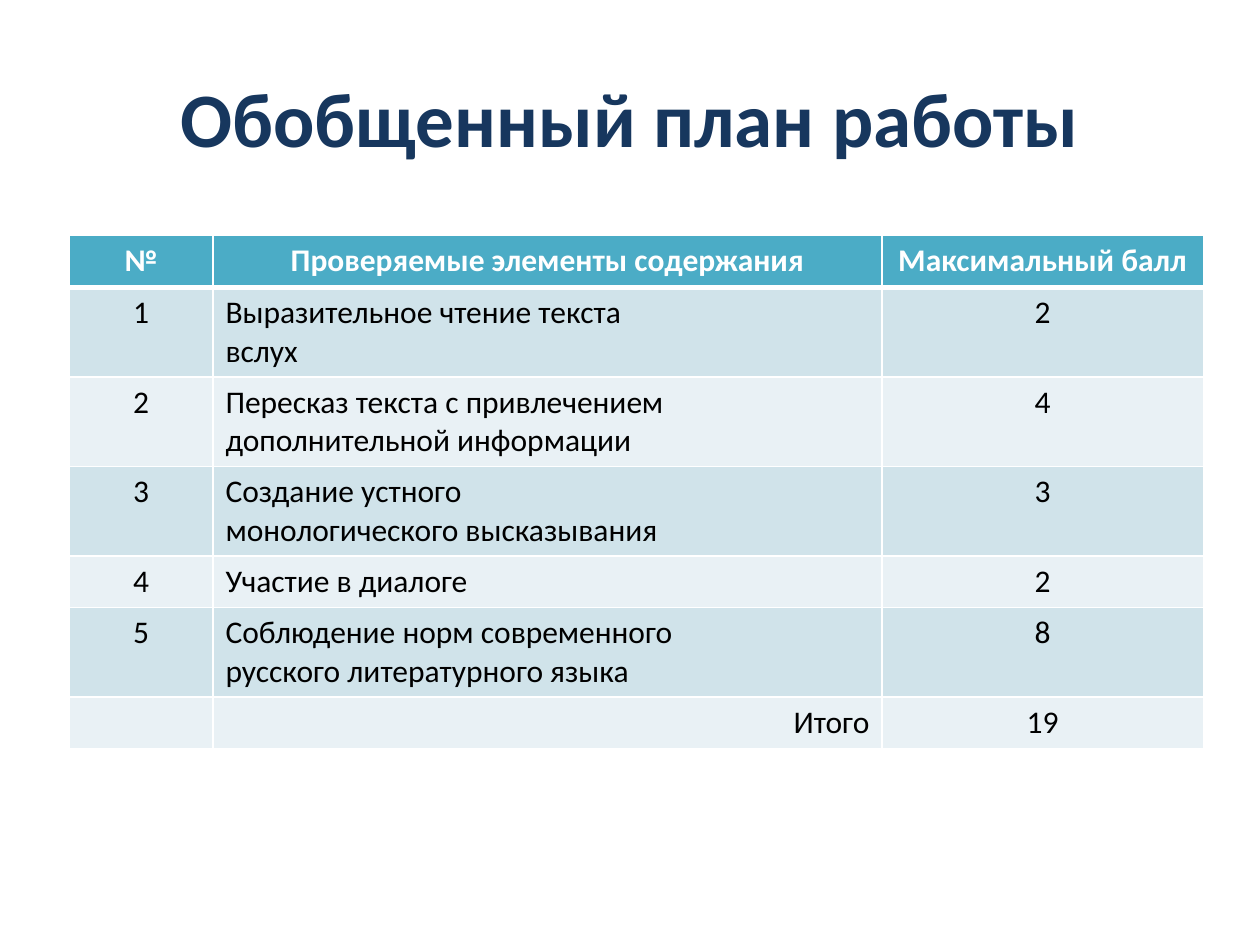
from lxml import etree
from pptx import Presentation
from pptx import util as u
from pptx.dml.color import RGBColor
from pptx.enum import text
from pptx.oxml import ns

NAVY = RGBColor(0x17, 0x37, 0x5E)
TEAL = RGBColor(0x4B, 0xAC, 0xC6)
BANDS = RGBColor(0xD0, 0xE3, 0xEA), RGBColor(0xE9, 0xF1, 0xF5)
WHITE = RGBColor(0xFF, 0xFF, 0xFF)
BLACK = RGBColor(0, 0, 0)
FONT = "Calibri"
LEFT, CENTER, RIGHT = text.PP_ALIGN.LEFT, text.PP_ALIGN.CENTER, text.PP_ALIGN.RIGHT

COLUMNS = 1.14, 5.31, 2.55
ROW_HEIGHT = 0.41
ROWS = [
    ("№", "Проверяемые элементы содержания", "Максимальный балл"),
    ("1", "Выразительное чтение текста\nвслух", "2"),
    ("2", "Пересказ текста с привлечением\nдополнительной информации", "4"),
    ("3", "Создание устного\nмонологического высказывания", "3"),
    ("4", "Участие в диалоге", "2"),
    ("5", "Соблюдение норм современного\nрусского литературного языка", "8"),
    ("", "Итого", "19"),
]


def write(frame, words, align, color, **values):
    """Fill a text frame with one formatted paragraph per line."""
    frame.text = words
    for para in frame.paragraphs:
        para.alignment = align
        for span in para.runs:
            span.font.color.rgb = color
            for name, value in {"name": FONT, **values}.items():
                setattr(span.font, name, value)


def draw_borders(cell, widths):
    """Give a cell white borders of the given widths in points."""
    properties = cell._tc.get_or_add_tcPr()
    for side, width in widths.items():
        line = etree.SubElement(properties, ns.qn(f"a:ln{side}"), w=str(u.Pt(width)))
        fill = etree.SubElement(line, ns.qn("a:solidFill"))
        etree.SubElement(fill, ns.qn("a:srgbClr"), val=str(WHITE))


def add_title(page, box):
    """Place the heading in the title placeholder."""
    title = page.shapes.title
    title.left, title.top, title.width, title.height = map(u.Inches, box)
    title.text_frame.vertical_anchor = text.MSO_ANCHOR.MIDDLE
    write(title.text_frame, "Обобщенный план работы", CENTER, NAVY, size=u.Pt(44), bold=True)


def add_plan(page, box):
    """Place the table of tested elements and maximum scores."""
    table = page.shapes.add_table(len(ROWS), len(COLUMNS), *map(u.Inches, box)).table
    for column, share in zip(table.columns, COLUMNS):
        column.width = u.Inches(box[2] * share / sum(COLUMNS))
    for r, row in enumerate(ROWS):
        table.rows[r].height = u.Inches(ROW_HEIGHT)
        header = r == 0
        middle = CENTER if header else RIGHT if row is ROWS[-1] else LEFT
        for c, (words, align) in enumerate(zip(row, (CENTER, middle, CENTER))):
            cell = table.cell(r, c)
            color = WHITE if header else BLACK
            write(cell.text_frame, words, align, color, size=u.Pt(18), bold=header)
            draw_borders(cell, {"L": 1, "R": 1, "T": 3 if r == 1 else 1, "B": 3 if header else 1})
            cell.fill.solid()
            cell.fill.fore_color.rgb = TEAL if header else BANDS[(r - 1) % 2]


def main():
    """Build and save the deck."""
    deck = Presentation()
    deck.slide_width, deck.slide_height = u.Inches(10), u.Inches(7.5)
    page = deck.slides.add_slide(deck.slide_layouts[5])
    add_title(page, (0.5, 0.3, 9, 1.25))
    add_plan(page, (0.55, 1.87, 9, ROW_HEIGHT * len(ROWS)))
    deck.save("out.pptx")


if __name__ == "__main__":
    main()
